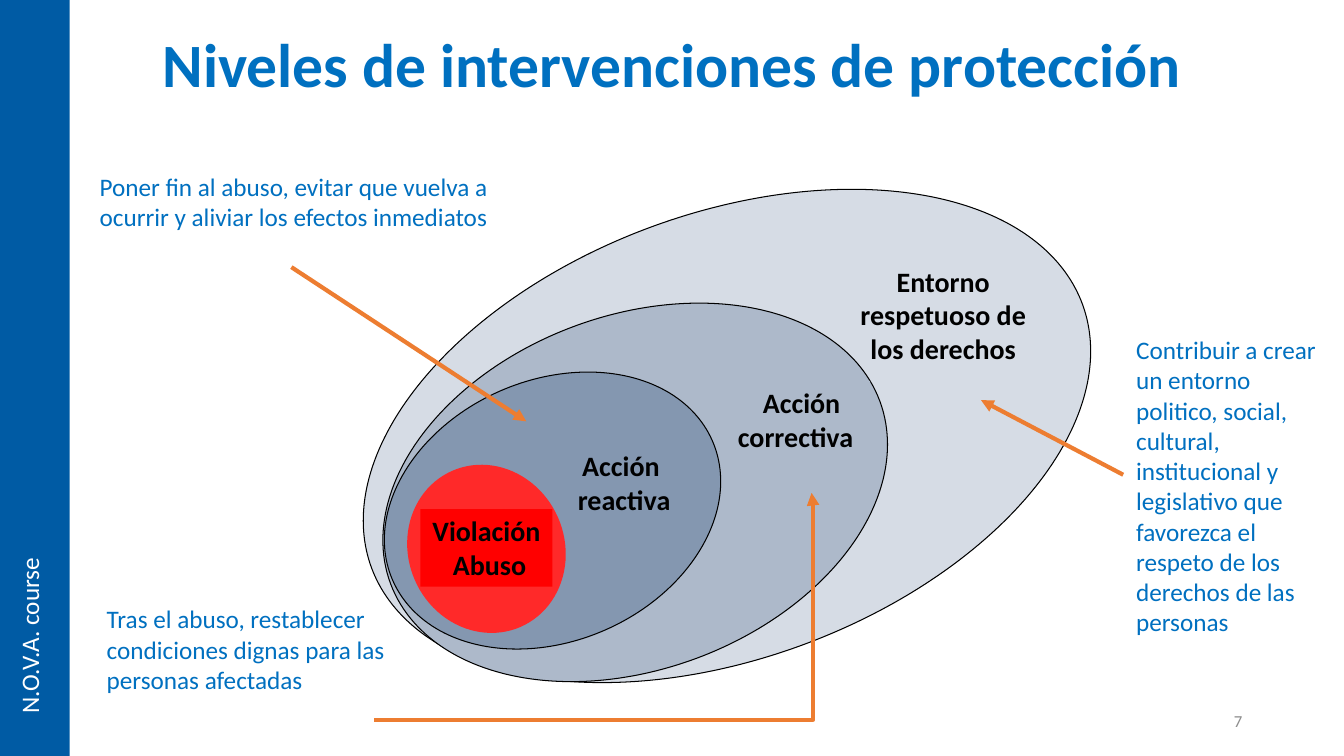
from dataclasses import dataclass

from lxml.etree import SubElement
from pptx import Presentation
from pptx.dml.color import RGBColor
from pptx.enum.shapes import MSO_CONNECTOR, MSO_SHAPE
from pptx.enum.text import MSO_ANCHOR, MSO_AUTO_SIZE, PP_ALIGN
from pptx.oxml.ns import qn
from pptx.util import Pt

EMU_PER_PX = 9144  # 100 px to the inch
SLIDE_SIZE = (1333, 750)


@dataclass(frozen=True)
class Theme:
    font: str = "Calibri"
    band: str = "005BA4"
    blue: str = "0070C0"
    white: str = "FFFFFF"
    black: str = "000000"
    grey: str = "8C8C8C"
    arrow: str = "ED7D31"
    title_size: int = 44
    label_size: int = 20
    note_size: int = 18
    number_size: int = 12


THEME = Theme()

TITLE = ("Niveles de intervenciones de protección", (92, 29, 1150, 107))
BAND = (0, 0, 69, 750)
COURSE = ("N.O.V.A. course", (9, 504, 50, 214))
PAGE_NUMBER = ("7", (942, 695, 300, 40))

# Outermost first: ellipse box, rotation, fill, outlined, label lines, label box, label fill,
# first-line indent
LEVELS = [
    ((345, 212, 752, 441), 339.6, "D6DCE5", True,
     ["Entorno respetuoso de los derechos"], (826, 257, 219, 111), "D6DCE5", 0),
    ((371, 313, 518, 351), 339.5, "ADB9CA", True,
     ["Acción correctiva"], (715, 378, 148, 77), "ADB9CA", 12),
    ((375, 377, 346, 259), 336.4, "8497B0", True,
     ["Acción ", "reactiva"], (534, 440, 170, 77), "8497B0", 0),
    ((405, 460, 155, 169), 336.4, "FF2929", False,
     ["Violación", " Abuso"], (417, 505, 131, 77), "FF0000", 0),
]

NOTES = [
    ("Poner fin al abuso, evitar que vuelva a ocurrir y aliviar los efectos inmediatos",
     (89, 165, 427, 71)),
    ("Tras el abuso, restablecer condiciones dignas para las personas afectadas",
     (96, 594, 321, 101)),
    ("Contribuir a crear un entorno politico, social, cultural, institucional y legislativo "
     "que favorezca el respeto de los derechos de las personas",
     (1117, 327, 216, 313)),
]

# Kind, start and end, bend position in thousandths of a percent
ARROWS = [
    (MSO_CONNECTOR.STRAIGHT, (289, 265, 522, 418), None),
    (MSO_CONNECTOR.STRAIGHT, (1114, 471, 973, 397), None),
    (MSO_CONNECTOR.ELBOW, (371, 714, 805, 489), 100300),
]


def emu(lengths):
    return [length * EMU_PER_PX for length in lengths]


def rgb(colour):
    return RGBColor.from_string(colour)


def assign(target, values):
    for name, value in values.items():
        setattr(target, name, value)


def write(shape, lines, size, colour, bold=False, align=PP_ALIGN.LEFT, frame_format=None,
          para_format=None):
    frame = shape.text_frame
    assign(frame, {"word_wrap": True, "auto_size": MSO_AUTO_SIZE.NONE,
                   "vertical_anchor": MSO_ANCHOR.TOP, **(frame_format or {})})
    for index, line in enumerate(lines):
        para = frame.add_paragraph() if index else frame.paragraphs[0]
        assign(para, {"alignment": align, **(para_format or {})})
        span = para.add_run()
        span.text = line
        assign(span.font, {"name": THEME.font, "size": Pt(size), "bold": bold})
        span.font.color.rgb = rgb(colour)


def add_text(page, text, box, size, colour, **options):
    shape = page.shapes.add_textbox(*emu(box))
    write(shape, [text], size, colour, **options)
    return shape


def add_filled(page, kind, box, fill, outlined=False, rotation=0):
    shape = page.shapes.add_shape(kind, *emu(box))
    shape.shadow.inherit = False
    shape.rotation = rotation
    shape.fill.solid()
    shape.fill.fore_color.rgb = rgb(fill)
    if outlined:
        shape.line.color.rgb = rgb(THEME.black)
        shape.line.width = Pt(0.75)
    else:
        shape.line.fill.background()
    return shape


def add_arrow(page, kind, ends, bend):
    arrow = page.shapes.add_connector(kind, *emu(ends))
    arrow.line.color.rgb = rgb(THEME.arrow)
    arrow.line.width = Pt(3)
    SubElement(arrow.line._get_or_add_ln(), qn("a:tailEnd"), type="triangle")
    properties = arrow._element.spPr
    SubElement(properties, qn("a:effectLst"))
    if bend:
        adjustments = properties.find(qn("a:prstGeom")).get_or_add_avLst()
        SubElement(adjustments, qn("a:gd"), name="adj1", fmla=f"val {bend}")


def add_level(page, ellipse, rotation, fill, outlined, lines, label_box, label_fill, indent):
    add_filled(page, MSO_SHAPE.OVAL, ellipse, fill, outlined, rotation)
    label = add_filled(page, MSO_SHAPE.RECTANGLE, label_box, label_fill)
    write(label, lines, THEME.label_size, THEME.black, bold=True, align=PP_ALIGN.CENTER)
    if indent:
        properties = label.text_frame.paragraphs[0]._p.get_or_add_pPr()
        properties.set("indent", str(indent * EMU_PER_PX))


def main():
    deck = Presentation()
    deck.slide_width, deck.slide_height = emu(SLIDE_SIZE)
    page = deck.slides.add_slide(deck.slide_layouts[5])

    text, box = TITLE
    title = page.shapes.title
    assign(title, dict(zip(("left", "top", "width", "height"), emu(box))))
    write(title, [text], THEME.title_size, THEME.blue, bold=True, align=PP_ALIGN.CENTER,
          para_format={"line_spacing": 0.9})

    add_text(page, *PAGE_NUMBER, THEME.number_size, THEME.grey, align=PP_ALIGN.RIGHT,
             frame_format={"vertical_anchor": MSO_ANCHOR.MIDDLE})
    add_filled(page, MSO_SHAPE.RECTANGLE, BAND, THEME.band)
    course = add_text(page, *COURSE, THEME.note_size, THEME.white)
    course.text_frame._txBody.bodyPr.set("vert", "vert270")

    for level in LEVELS:
        add_level(page, *level)
    for note in NOTES:
        add_text(page, *note, THEME.note_size, THEME.blue)
    for arrow in ARROWS:
        add_arrow(page, *arrow)

    deck.save("out.pptx")


if __name__ == "__main__":
    main()
